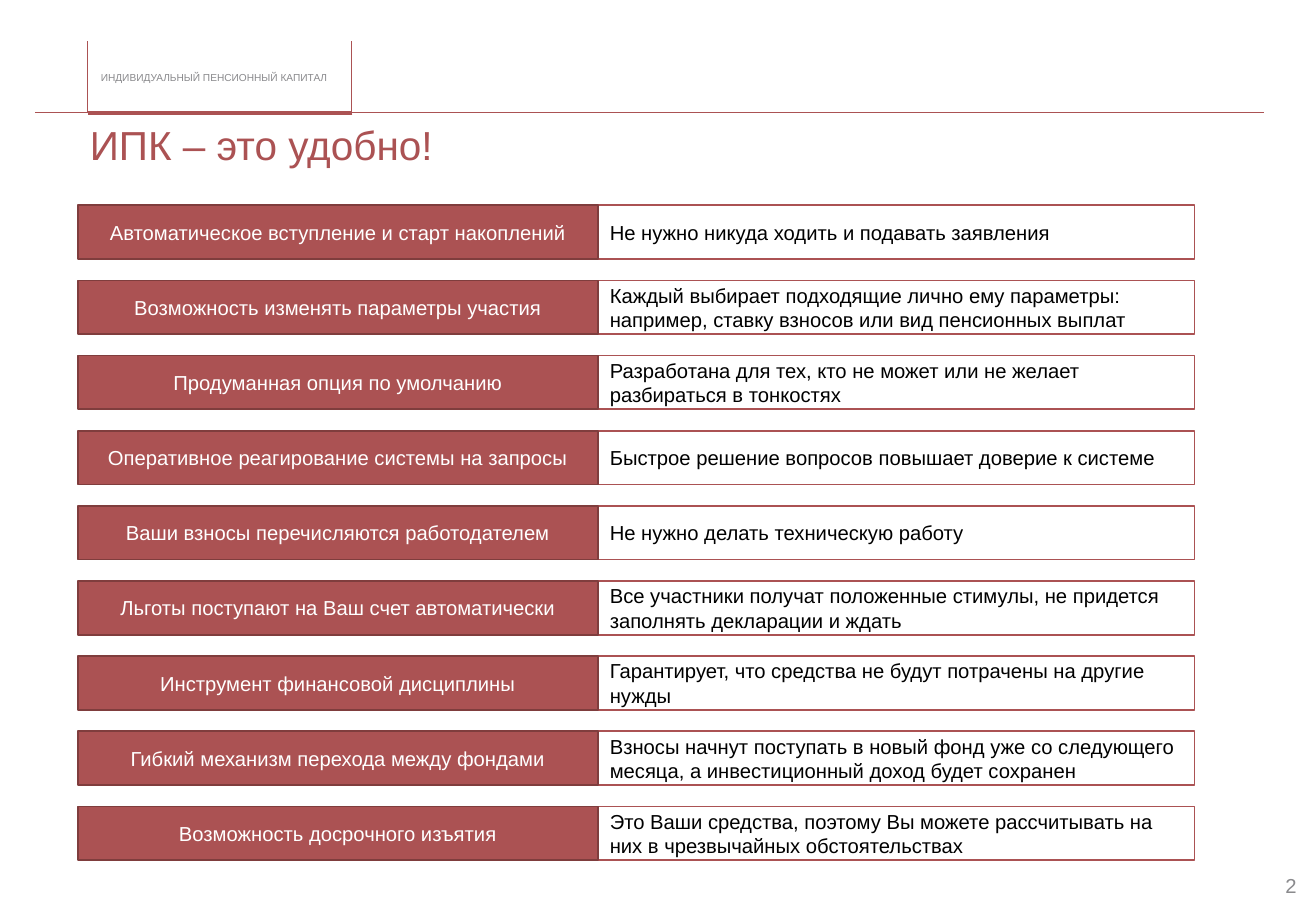
from dataclasses import dataclass

from lxml import etree
from pptx import Presentation
from pptx import util as u
from pptx.dml.color import RGBColor
from pptx.enum import shapes, text
from pptx.oxml import ns

WIDTH, HEIGHT = u.Inches(10.83), u.Inches(7.5)
RED, DARK_RED, GREY, WHITE, BLACK = "AB5253", "7F3D3D", "8A8A8D", "FFFFFF", "000000"
LEFT, CENTER = text.PP_ALIGN.LEFT, text.PP_ALIGN.CENTER
ROW_TOP, ROW_PITCH, ROW_HEIGHT = 22.53, 8.25, 5.9


@dataclass
class Rule:
    """Straight line, with ends in percent of the slide's size."""
    x1: float
    y1: float
    x2: float
    y2: float
    weight: float = 0.25


@dataclass
class Label:
    """Free text, with its box in percent of the slide's size."""
    words: str
    x: float
    y: float
    w: float
    h: float
    size: float
    color: str
    align: text.PP_ALIGN = LEFT
    spacing: float = 1.0


@dataclass
class Column:
    """Column of boxes, with its place in percent of the slide's width."""
    x: float
    w: float
    fill: str
    line: str
    color: str
    align: text.PP_ALIGN


@dataclass
class Benefit:
    """One row: an advantage and what it means."""
    name: str
    meaning: str


RULES = [
    Rule(6.65, 12.27, 2.68, 12.27),
    Rule(26.78, 12.4, 6.65, 12.4, 2.25),
    Rule(96.03, 12.27, 26.6, 12.27),
    Rule(6.65, 12.4, 6.65, 4.53),
    Rule(26.69, 12.4, 26.69, 4.53),
]
LABELS = [
    Label("ИНДИВИДУАЛЬНЫЙ ПЕНСИОННЫЙ КАПИТАЛ", 7.66, 7.87, 18.74, 1.33, 6, GREY),
    Label("ИПК – это удобно!", 6.83, 12.4, 89.2, 7.47, 24, RED, spacing=0.9),
    Label("2", 96.12, 94.53, 3.97, 5.33, 12, GREY, CENTER),
]
MEANING = Column(45.43, 45.34, WHITE, RED, BLACK, LEFT)
NAME = Column(5.91, 39.52, RED, DARK_RED, WHITE, CENTER)
BENEFITS = [
    Benefit("Автоматическое вступление и старт накоплений",
            "Не нужно никуда ходить и подавать заявления"),
    Benefit("Возможность изменять параметры участия",
            "Каждый выбирает подходящие лично ему параметры: например, "
            "ставку взносов или вид пенсионных выплат"),
    Benefit("Продуманная опция по умолчанию",
            "Разработана для тех, кто не может или не желает разбираться в тонкостях"),
    Benefit("Оперативное реагирование системы на запросы",
            "Быстрое решение вопросов повышает доверие к системе"),
    Benefit("Ваши взносы перечисляются работодателем",
            "Не нужно делать техническую работу"),
    Benefit("Льготы поступают на Ваш счет автоматически",
            "Все участники получат положенные стимулы, не придется "
            "заполнять декларации и ждать"),
    Benefit("Инструмент финансовой дисциплины",
            "Гарантирует, что средства не будут потрачены на другие нужды"),
    Benefit("Гибкий механизм перехода между фондами",
            "Взносы начнут поступать в новый фонд уже со следующего месяца, "
            "а инвестиционный доход будет сохранен"),
    Benefit("Возможность досрочного изъятия",
            "Это Ваши средства, поэтому Вы можете рассчитывать на них "
            "в чрезвычайных обстоятельствах"),
]


def rgb(color: str) -> RGBColor:
    """Turn a hex string into a colour."""
    return RGBColor.from_string(color)


def across(share: float) -> int:
    """Turn a percentage of the slide's width into a length."""
    return round(WIDTH * share / 100)


def down(share: float) -> int:
    """Turn a percentage of the slide's height into a length."""
    return round(HEIGHT * share / 100)


def write(tf, words: str, size: float, color: str, align: text.PP_ALIGN) -> None:
    """Fill a text frame with one formatted paragraph."""
    tf.text = words
    tf.word_wrap = True
    tf.vertical_anchor = text.MSO_ANCHOR.MIDDLE
    p = tf.paragraphs[0]
    p.alignment = align
    r = p.runs[0]
    r.font.name, r.font.size = "Arial", u.Pt(size)
    r.font.color.rgb = rgb(color)


def draw_rule(s, rule: Rule) -> None:
    """Draw one line of the header."""
    sp = s.shapes.add_connector(shapes.MSO_CONNECTOR.STRAIGHT, across(rule.x1),
                                down(rule.y1), across(rule.x2), down(rule.y2))
    sp.line.color.rgb = rgb(RED)
    sp.line.width = u.Pt(rule.weight)
    etree.SubElement(sp._element.spPr, ns.qn("a:effectLst"))


def draw_label(s, label: Label) -> None:
    """Draw one text box without margins."""
    sp = s.shapes.add_textbox(across(label.x), down(label.y),
                              across(label.w), down(label.h))
    tf = sp.text_frame
    tf.margin_left = tf.margin_right = tf.margin_top = tf.margin_bottom = 0
    write(tf, label.words, label.size, label.color, label.align)
    tf.paragraphs[0].line_spacing = label.spacing


def draw_box(s, column: Column, row: int, words: str) -> None:
    """Draw the box of a column in the given row."""
    sp = s.shapes.add_shape(shapes.MSO_SHAPE.RECTANGLE, across(column.x),
                            down(ROW_TOP + row * ROW_PITCH),
                            across(column.w), down(ROW_HEIGHT))
    sp.shadow.inherit = False
    sp.fill.solid()
    sp.fill.fore_color.rgb = rgb(column.fill)
    sp.line.color.rgb = rgb(column.line)
    sp.line.width = u.Pt(1)
    write(sp.text_frame, words, 12, column.color, column.align)


def main() -> None:
    """Build the slide and save it."""
    prs = Presentation()
    prs.slide_width, prs.slide_height = WIDTH, HEIGHT
    s = prs.slides.add_slide(prs.slide_layouts[6])
    for rule in RULES:
        draw_rule(s, rule)
    for label in LABELS:
        draw_label(s, label)
    for row, benefit in enumerate(BENEFITS):
        draw_box(s, MEANING, row, benefit.meaning)
        draw_box(s, NAME, row, benefit.name)
    prs.save("out.pptx")


if __name__ == "__main__":
    main()
